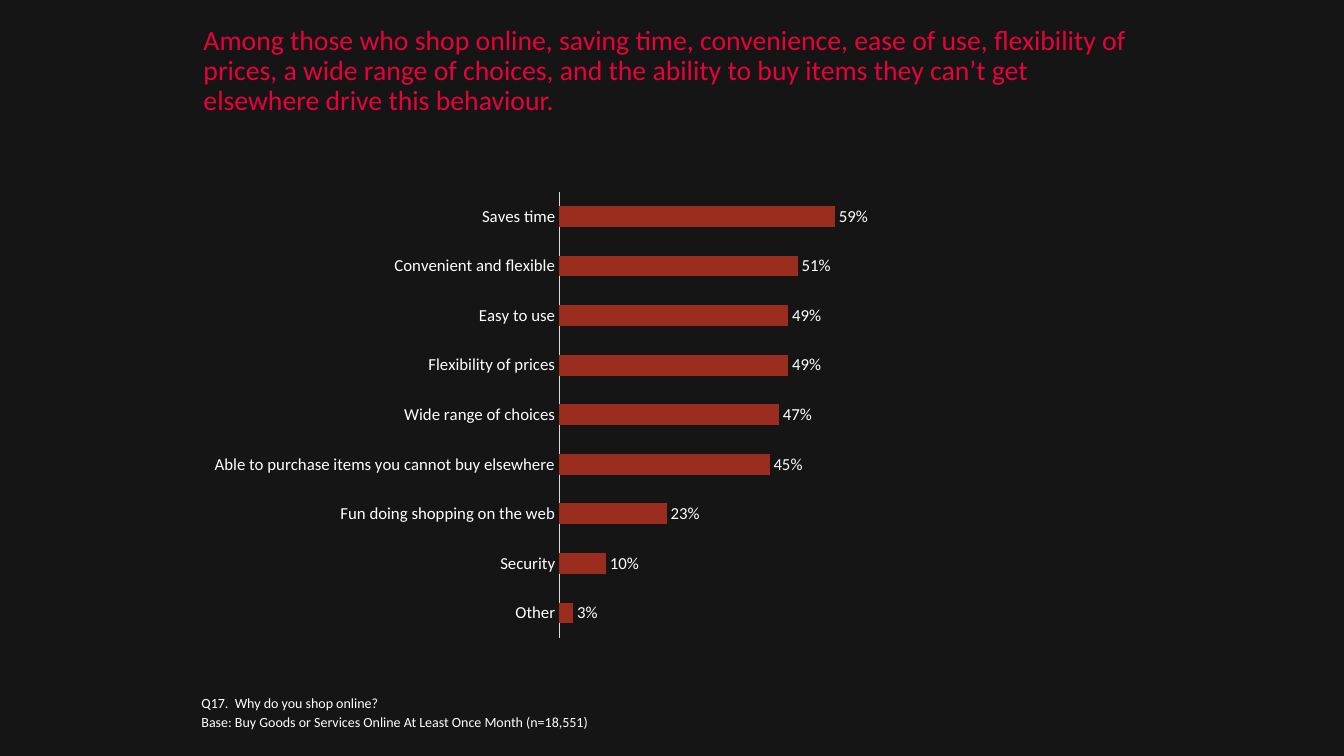
from lxml import etree
from pptx import Presentation
from pptx.chart.data import CategoryChartData
from pptx.dml.color import RGBColor
from pptx.enum.chart import XL_CHART_TYPE, XL_LABEL_POSITION, XL_TICK_LABEL_POSITION, XL_TICK_MARK
from pptx.enum.text import MSO_ANCHOR
from pptx.oxml.ns import qn
from pptx.util import Inches, Pt

COLORS = {"background": "151515", "title": "E6023B", "text": "FFFFFF",
          "bar": "9B2D1F", "axis": "D9D9D9"}
FONT = "Calibri"

TITLE = ("Among those who shop online, saving time, convenience, ease of use, "
         "flexibility of prices, a wide range of choices, and the ability to buy "
         "items they can’t get elsewhere drive this behaviour.")
FOOTNOTES = ["Q17.  Why do you shop online?",
             "Base: Buy Goods or Services Online At Least Once Month (n=18,551)"]
REASONS = {
    "Saves time": 0.59,
    "Convenient and flexible": 0.51,
    "Easy to use": 0.49,
    "Flexibility of prices": 0.49,
    "Wide range of choices": 0.47,
    "Able to purchase items you cannot buy elsewhere": 0.45,
    "Fun doing shopping on the web": 0.23,
    "Security": 0.10,
    "Other": 0.03,
}
# Plot area as fractions of the chart frame
PLOT_LAYOUT = {"layoutTarget": "inner", "xMode": "edge", "yMode": "edge",
               "x": 0.427, "y": 0.018, "w": 0.552, "h": 0.962}


def rgb(name):
    return RGBColor.from_string(COLORS[name])


def set_attrs(obj, values):
    for name, value in values.items():
        setattr(obj, name, value)


def style_font(font, size, color="text"):
    set_attrs(font, {"name": FONT, "size": Pt(size), "bold": False})
    font.color.rgb = rgb(color)


def add_text(s, box, lines, size, color, anchor, paragraph_format, gap=0):
    tf = s.shapes.add_textbox(*map(Inches, box)).text_frame
    set_attrs(tf, {"word_wrap": True, "vertical_anchor": anchor})
    for i, line in enumerate(lines):
        p = tf.add_paragraph() if i else tf.paragraphs[0]
        set_attrs(p, paragraph_format)
        if i:
            p.space_before = Pt(gap)
        r = p.add_run()
        r.text = line
        style_font(r.font, size, color)


def set_plot_layout(chart):
    plot_area = chart._chartSpace.chart.plotArea
    for old in plot_area.findall(qn("c:layout")):
        plot_area.remove(old)
    layout = etree.Element(qn("c:layout"))
    manual = etree.SubElement(layout, qn("c:manualLayout"))
    for tag, value in PLOT_LAYOUT.items():
        etree.SubElement(manual, qn(f"c:{tag}")).set("val", str(value))
    plot_area.insert(0, layout)


def add_bar_chart(s, box, values):
    data = CategoryChartData(number_format="0%")
    data.categories = list(values)
    data.add_series("Series 1", list(values.values()))
    chart = s.shapes.add_chart(XL_CHART_TYPE.BAR_CLUSTERED,
                               *map(Inches, box), data).chart
    set_attrs(chart, {"has_legend": False, "has_title": False})
    style_font(chart.font, 10)
    set_plot_layout(chart)

    # Axes
    axis = chart.category_axis
    set_attrs(axis, {"reverse_order": True, "has_major_gridlines": False,
                     "major_tick_mark": XL_TICK_MARK.NONE,
                     "minor_tick_mark": XL_TICK_MARK.NONE,
                     "tick_label_position": XL_TICK_LABEL_POSITION.NEXT_TO_AXIS})
    style_font(axis.tick_labels.font, 12)
    axis.format.line.color.rgb = rgb("axis")
    axis.format.line.width = Pt(0.75)
    set_attrs(chart.value_axis, {"visible": False, "has_major_gridlines": False,
                                 "minimum_scale": 0, "maximum_scale": 1})

    # Bars and their labels
    plot = chart.plots[0]
    set_attrs(plot, {"gap_width": 139, "vary_by_categories": False,
                     "has_data_labels": True})
    fill = plot.series[0].format.fill
    fill.solid()
    fill.fore_color.rgb = rgb("bar")
    set_attrs(plot.data_labels, {"show_value": True, "number_format": "0%",
                                 "number_format_is_linked": False,
                                 "position": XL_LABEL_POSITION.OUTSIDE_END})
    style_font(plot.data_labels.font, 12)


def main():
    prs = Presentation()
    set_attrs(prs, {"slide_width": Inches(13.33), "slide_height": Inches(7.5)})
    s = prs.slides.add_slide(prs.slide_layouts[6])
    s.background.fill.solid()
    s.background.fill.fore_color.rgb = rgb("background")

    # Footnotes, headline and chart
    add_text(s, (1.9, 6.85, 7.94, 0.45), FOOTNOTES, 10, "text",
             MSO_ANCHOR.BOTTOM, {"line_spacing": 0.95}, gap=2)
    add_text(s, (1.92, 0.25, 9.46, 0.91), [TITLE], 19.8, "title",
             MSO_ANCHOR.MIDDLE, {"line_spacing": 0.9})
    add_bar_chart(s, (1.96, 1.82, 8.4, 4.6), REASONS)
    prs.save("out.pptx")


if __name__ == "__main__":
    main()
